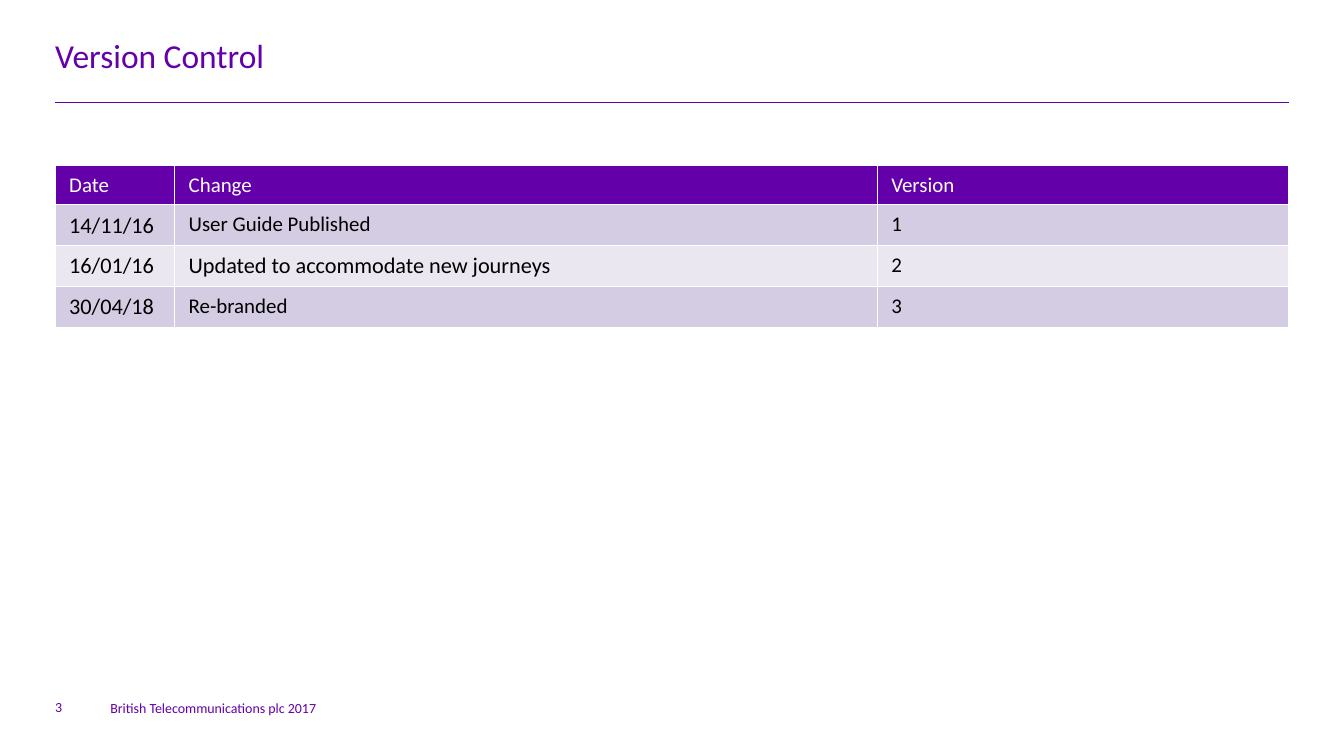
"""Build the version control slide with its table of changes."""
from lxml import etree
from pptx import Presentation
from pptx.dml.color import RGBColor
from pptx.enum.shapes import MSO_CONNECTOR
from pptx.enum.text import MSO_ANCHOR
from pptx.oxml import parse_xml
from pptx.oxml.ns import nsdecls, qn
from pptx.util import Inches, Pt

STRAIGHT = MSO_CONNECTOR.STRAIGHT
TOP, BOTTOM = MSO_ANCHOR.TOP, MSO_ANCHOR.BOTTOM
PURPLE, WHITE, BLACK = "6400AA", "FFFFFF", "000000"
BANDS = ["D3CCE2", "EAE7F1"]
WIDTH, HEIGHT = 13.39, 7.48
MARGIN = 0.55
CONTENT = WIDTH - 2 * MARGIN


def rgb(value):
    return RGBColor.from_string(value)


def write(frame, text, size, color, margins, anchor):
    frame.word_wrap = True
    frame.vertical_anchor = anchor
    run = frame.paragraphs[0].add_run()
    run.text = text
    for name, value in {"name": "Calibri", "size": Pt(size)}.items():
        setattr(run.font, name, value)
    run.font.color.rgb = rgb(color)
    for side, inset in zip(("left", "top", "right", "bottom"), margins):
        setattr(frame, f"margin_{side}", Inches(inset))


deck = Presentation()
deck.slide_width, deck.slide_height = Inches(WIDTH), Inches(HEIGHT)
slide = deck.slides.add_slide(deck.slide_layouts[6])

rule = slide.shapes.add_connector(
    STRAIGHT, Inches(MARGIN), Inches(1.02), Inches(MARGIN + CONTENT), Inches(1.02))
rule.line.color.rgb = rgb(PURPLE)
rule.line.width = Pt(0.25)
etree.SubElement(rule.line._get_or_add_ln().getparent(), qn("a:effectLst"))

labels = [
    ("British Telecommunications plc 2017", 10, BOTTOM, (2 * MARGIN, 6.84, 2.36, 0.29)),
    ("Version Control", 24, TOP, (MARGIN, 0.35, CONTENT, 0.47)),
    ("3", 10, BOTTOM, (MARGIN, 6.81, 0.39, 0.31)),
]
for text, size, anchor, place in labels:
    box = slide.shapes.add_textbox(*map(Inches, place))
    write(box.text_frame, text, size, PURPLE, (0, 0, 0, 0), anchor)

changes = [
    [("Date", 15), ("Change", 15), ("Version", 15)],
    [("14/11/16", 16), ("User Guide Published", 15), ("1", 15)],
    [("16/01/16", 16), ("Updated to accommodate new journeys", 16), ("2", 15)],
    [("30/04/18", 16), ("Re-branded", 15), ("3", 15)],
]
column_widths = [1.19, 7, CONTENT - 8.19]
row_heights = [0.38] + [0.4] * 3
history = slide.shapes.add_table(
    len(changes), len(column_widths), Inches(MARGIN), Inches(1.65),
    Inches(CONTENT), Inches(sum(row_heights))).table
for column, width in zip(history.columns, column_widths):
    column.width = Inches(width)

for index, (row, entries) in enumerate(zip(history.rows, changes)):
    row.height = Inches(row_heights[index])
    fill = BANDS[(index - 1) % 2] if index else PURPLE
    ink = BLACK if index else WHITE
    for cell, (text, size) in zip(row.cells, entries):
        write(cell.text_frame, text, size, ink, (0.14, 0.07, 0.14, 0.07), TOP)
        cell.vertical_anchor = TOP
        for side, inset in {"left": 0.14, "top": 0.07, "right": 0.14, "bottom": 0.07}.items():
            setattr(cell, f"margin_{side}", Inches(inset))
        properties = cell._tc.get_or_add_tcPr()
        for edge in "LRTB":
            properties.append(parse_xml(
                f'<a:ln{edge} {nsdecls("a")} w="{Pt(1)}"><a:solidFill>'
                f'<a:srgbClr val="{WHITE}"/></a:solidFill></a:ln{edge}>'))
        cell.fill.solid()
        cell.fill.fore_color.rgb = rgb(fill)

deck.save("out.pptx")
